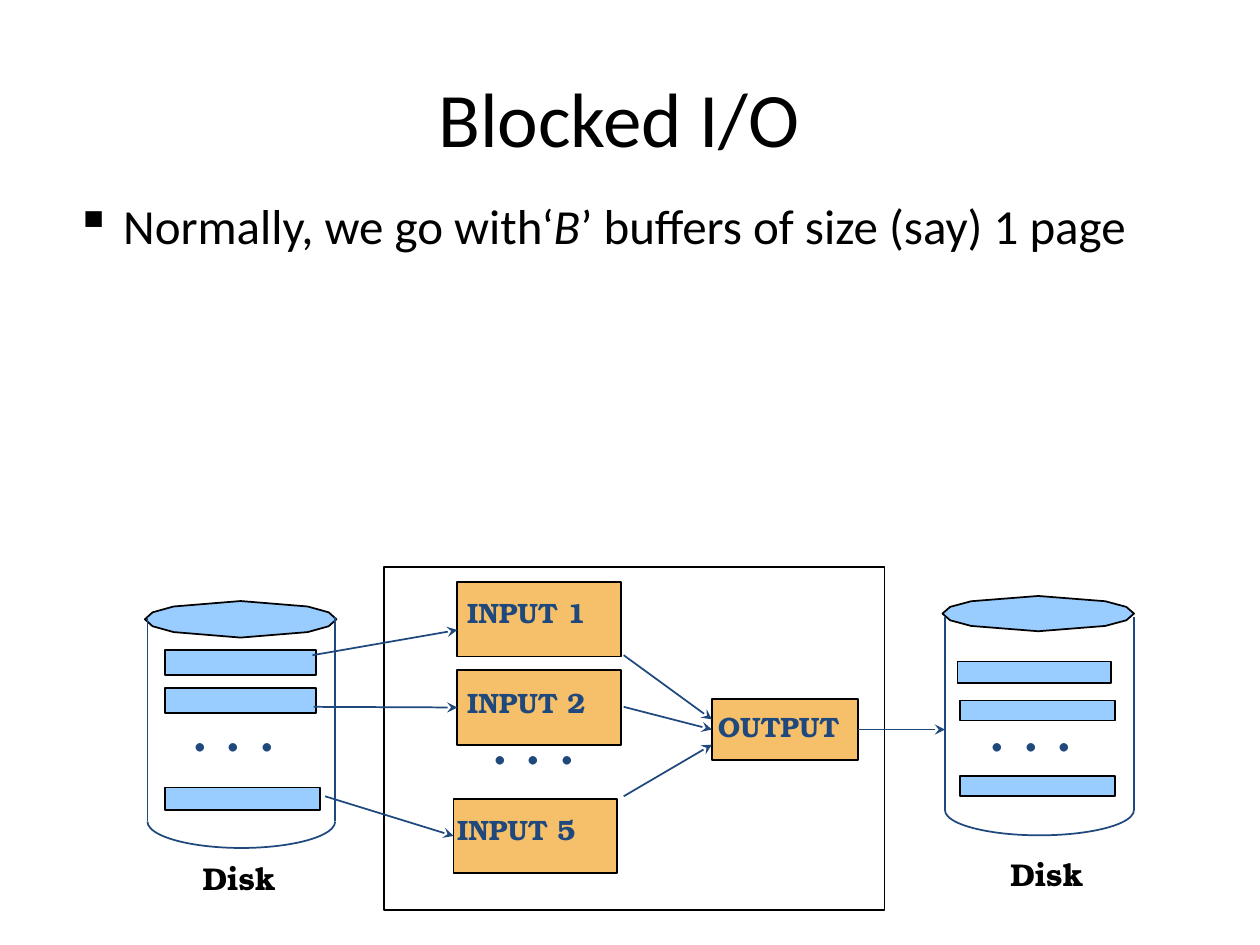
from pptx import Presentation
from pptx.util import Inches as In, Pt
from pptx.dml.color import RGBColor as Rgb
from pptx.enum.shapes import MSO_SHAPE as Kind, MSO_CONNECTOR as Link
from pptx.enum.text import PP_ALIGN as Align, MSO_ANCHOR as Anchor
from pptx.oxml.ns import qn
from lxml.etree import SubElement as Sub


class Theme:
    body, label = "Calibri", "TeX Gyre Bonum"
    ink, navy = Rgb(0, 0, 0), Rgb(0x1F, 0x49, 0x7D)
    blue, gold = Rgb(0x99, 0xCC, 0xFF), Rgb(0xF6, 0xBF, 0x69)
    head, text, dots, disk, tag = 44, 28, 40, 18, 16
    line = 1


# Content: boxes are left, top, width, height in inches
TITLE = "Blocked I/O"
POINT = [("Normally, we go with‘", False), ("B", True),
         ("’ buffers of size (say) 1 page", False)]
DISKS = [
    dict(side=(1.17, 2.66), lid=(1.15, 4.77, 1.52, 0.29), base=6.52, deep=0.21,
         slots=[(1.31, 5.16, 1.2, 0.2), (1.31, 5.46, 1.2, 0.2),
                (1.31, 6.25, 1.23, 0.18)],
         dots=(1.42, 5.36, 0.89, 0.76), name=(1.51, 6.77, 0.78, 0.4)),
    dict(side=(7.5, 9), lid=(7.48, 4.73, 1.52, 0.28), base=6.43, deep=0.2,
         slots=[(7.6, 5.25, 1.22, 0.17), (7.62, 5.56, 1.23, 0.16),
                (7.62, 6.16, 1.23, 0.16)],
         dots=(7.75, 5.36, 0.91, 0.76), name=(7.92, 6.74, 0.78, 0.4)),
]
MEMORY = (3.05, 4.5, 3.97, 2.72)
BUFFERS = {  # name: box, label box
    "INPUT 1": ((3.63, 4.62, 1.3, 0.59), (3.61, 4.68, 1.14, 0.36)),
    "INPUT 2": ((3.63, 5.32, 1.3, 0.59), (3.61, 5.39, 1.14, 0.36)),
    "INPUT 5": ((3.6, 6.34, 1.3, 0.59), (3.53, 6.4, 1.15, 0.37)),
    "OUTPUT": ((5.65, 5.55, 1.16, 0.48), (5.6, 5.58, 1.16, 0.36)),
}
GAP = (3.8, 5.46, 0.89, 0.76)
ARROWS = [  # an end is a point or a buffer with its side (1 left, 3 right)
    ((2.48, 5.2), (3.63, 5)),
    ((2.49, 5.61), ("INPUT 2", 1)),
    ((2.58, 6.32), ("INPUT 5", 1)),
    ((4.95, 5.2), (5.65, 5.71)),
    ((4.95, 5.61), ("OUTPUT", 1)),
    ((4.95, 6.32), (5.65, 5.91)),
    (("OUTPUT", 3), (7.5, 5.79)),
]

deck = Presentation()
deck.slide_width, deck.slide_height = In(10), In(7.5)
page = deck.slides.add_slide(deck.slide_layouts[6]).shapes


def write(box, runs, size, font, color=Theme.ink, bold=False, wrap=False):
    frame = page.add_textbox(*map(In, box)).text_frame
    frame.word_wrap = wrap
    para = frame.paragraphs[0]
    for words, slant in runs:
        run = para.add_run()
        run.text = words
        face = run.font
        face.name, face.size, face.color.rgb = font, Pt(size), color
        face.bold, face.italic = bold, slant
    return frame


def paint(shape, fill=None, line=Theme.ink):
    shape.shadow.inherit = False
    if fill is None:
        shape.fill.background()
    else:
        shape.fill.solid()
        shape.fill.fore_color.rgb = fill
    shape.line.color.rgb, shape.line.width = line, Pt(Theme.line)
    return shape


def block(box, fill=None):
    return paint(page.add_shape(Kind.RECTANGLE, *map(In, box)), fill)


def stroke(start, end):
    wire = page.add_connector(Link.STRAIGHT, *map(In, start + end))
    wire.line.color.rgb, wire.line.width = Theme.navy, Pt(Theme.line)
    Sub(wire._element.spPr, qn("a:effectLst"))
    return wire


def ring(box):
    """Twelve-sided disk lid, mirrored from one quarter."""
    left, top, wide, high = box
    part = [(1, 0), (0.92, 0.38), (0.7, 0.7)]
    half = part + [(0, 1)] + [(-x, y) for x, y in reversed(part)]
    full = half + [(-x, -y) for x, y in half[1:-1]]
    dots = [(In(left + wide * (1 + x) / 2), In(top + high * (1 + y) / 2))
            for x, y in full]
    pen = page.build_freeform(*dots[0], scale=1.0)
    pen.add_line_segments(dots[1:], close=True)
    paint(pen.convert_to_shape(), Theme.blue)


def gap(box, wrap=False):
    write(box, [(". . .", False)], Theme.dots, Theme.body, Theme.navy, wrap=wrap)


# Title and bullet
head = write((0, 0.3, 9.83, 1.25), [(TITLE, False)], Theme.head, Theme.body,
             wrap=True)
head.vertical_anchor = Anchor.MIDDLE
head.paragraphs[0].alignment = Align.CENTER
para = write((0.5, 1.5, 9.33, 5.67), POINT, Theme.text, Theme.body,
             wrap=True).paragraphs[0]
para.space_before = Pt(Theme.text * 0.2)
prop = para._p.get_or_add_pPr()
prop.set("marL", str(In(0.38)))
prop.set("indent", str(-In(0.38)))
Sub(prop, qn("a:buChar"), char="▪")

# Disks
for disk in DISKS:
    left, right = disk["side"]
    base, deep = disk["base"], disk["deep"]
    ring(disk["lid"])
    for x in (left, right):
        stroke((x, 4.9), (x, base))
    arc = page.add_shape(Kind.ARC, In(left), In(base - deep),
                         In(right - left), In(2 * deep))
    arc.adjustments[0], arc.adjustments[1] = 0, 108  # lower half turn
    paint(arc, line=Theme.navy)
    for slot in disk["slots"]:
        block(slot, Theme.blue)
    gap(disk["dots"])
    write(disk["name"], [("Disk", False)], Theme.disk, Theme.label, bold=True)

# Memory and its buffers
block(MEMORY)
boxes = {}
for name, (box, tag) in BUFFERS.items():
    boxes[name] = block(box, Theme.gold)
    write(tag, [(name, False)], Theme.tag, Theme.label, Theme.navy, bold=True)
gap(GAP)


# Arrows
def spot(end):
    if end[0] not in BUFFERS:
        return end
    left, top, wide, high = BUFFERS[end[0]][0]
    return left + (wide if end[1] == 3 else 0), top + high / 2


for start, end in ARROWS:
    wire = stroke(spot(start), spot(end))
    if start[0] in boxes:
        wire.begin_connect(boxes[start[0]], start[1])
    if end[0] in boxes:
        wire.end_connect(boxes[end[0]], end[1])
    Sub(wire.line._get_or_add_ln(), qn("a:tailEnd"), type="stealth")

deck.save("out.pptx")
